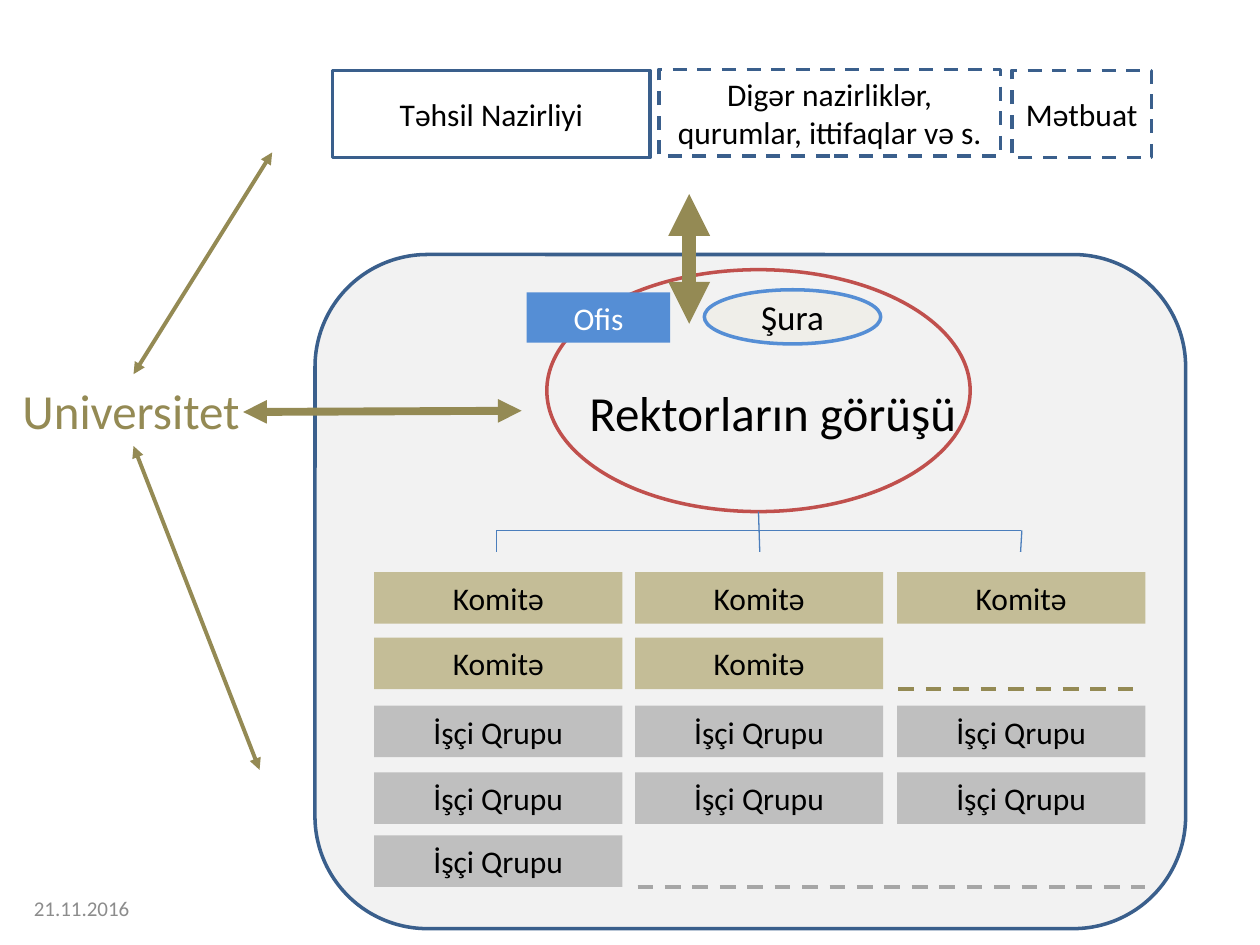
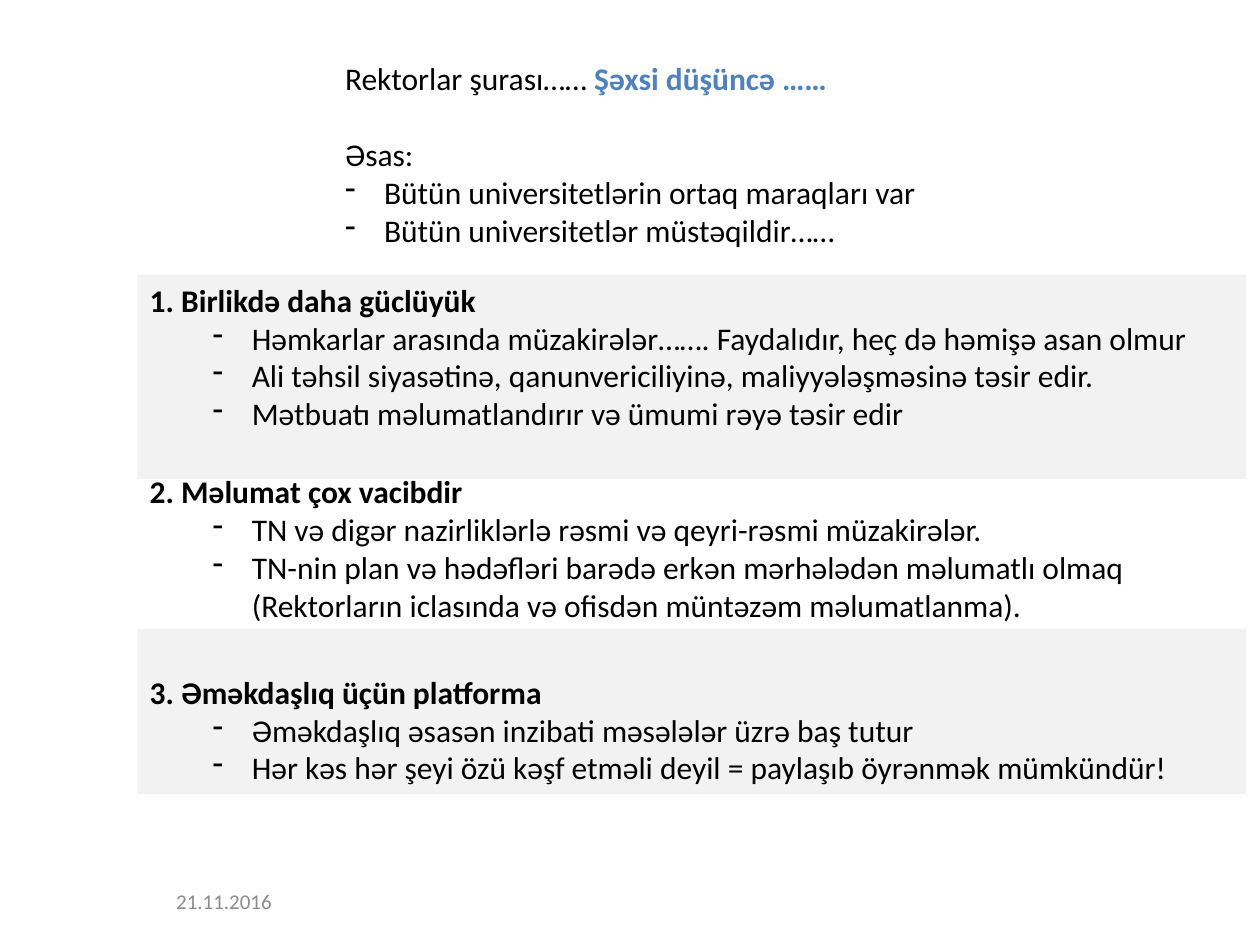
from lxml.etree import SubElement
from pptx import Presentation
from pptx.dml.color import RGBColor
from pptx.enum.dml import MSO_LINE_DASH_STYLE as Dash
from pptx.enum.shapes import MSO_CONNECTOR as Connector, MSO_SHAPE as Shape
from pptx.enum.text import MSO_ANCHOR as Anchor, PP_ALIGN as Align
from pptx.oxml.ns import qn
from pptx.util import Emu, Pt

PX = 9144  # 100 px to the inch
FONT = "Calibri"
BLACK, WHITE = "000000", "FFFFFF"
PANEL, NAVY, RED = "F2F2F2", "3A5F8C", "C0504D"
BLUE, ACCENT, TREE = "558ED5", "4F81BD", "4B7EBC"
OLIVE, SAND, CREAM = "948A54", "C4BD97", "EEECE1"
SILVER, GREY, DATE_GREY = "BFBFBF", "A6A6A6", "8C8C8C"


def px(*lengths):
    return [Emu(length * PX) for length in lengths]


def rgb(color):
    return RGBColor.from_string(color)


def style_paragraph(paragraph, size, color, bold=False):
    font = paragraph.font
    font.name, font.size, font.bold = FONT, Pt(size), bold
    font.color.rgb = rgb(color)


def add_box(slide, kind, at, fill=None, line=None, dashed=False,
            text="", size=18, color=BLACK):
    box = slide.shapes.add_shape(kind, *px(*at))
    box.shadow.inherit = False
    if fill:
        box.fill.solid()
        box.fill.fore_color.rgb = rgb(fill)
    else:
        box.fill.background()
    if line:
        box.line.color.rgb = rgb(line)
        box.line.width = Pt(2)
        if dashed:
            box.line.dash_style = Dash.DASH
    else:
        box.line.fill.background()
    if text:
        box.text_frame.vertical_anchor = Anchor.MIDDLE
        paragraph = box.text_frame.paragraphs[0]
        paragraph.text = text
        paragraph.alignment = Align.CENTER
        style_paragraph(paragraph, size, color)
    return box


def add_label(slide, at, text, size, color, wrap=False, anchor=Anchor.TOP):
    frame = slide.shapes.add_textbox(*px(*at)).text_frame
    frame.word_wrap = wrap
    frame.vertical_anchor = anchor
    frame.text = text
    style_paragraph(frame.paragraphs[0], size, color)


def add_date(slide, left, top):
    add_label(slide, (left, top, 233, 40), "21.11.2016", 12, DATE_GREY,
              wrap=True, anchor=Anchor.MIDDLE)


def add_line(slide, start, end, color, width, dashed=False, arrows=False):
    line = slide.shapes.add_connector(Connector.STRAIGHT, *px(*start, *end))
    line.line.color.rgb = rgb(color)
    line.line.width = Pt(width)
    if dashed:
        line.line.dash_style = Dash.DASH
    if arrows:
        outline = line.line._get_or_add_ln()
        for tip in ("a:headEnd", "a:tailEnd"):
            SubElement(outline, qn(tip), type="triangle")
    SubElement(line._element.spPr, qn("a:effectLst"))


def set_dash_bullet(paragraph, margin):
    properties = paragraph._p.get_or_add_pPr()
    properties.set("marL", str(margin * PX))
    properties.set("indent", str(-31 * PX))
    SubElement(properties, qn("a:buFontTx"))
    SubElement(properties, qn("a:buChar"), char="-")


def fill_outline(frame, heading, points, margin, bold):
    """Write a heading and its dashed points into the frame."""
    frame.word_wrap = True
    frame.vertical_anchor = Anchor.TOP
    lead = frame.paragraphs[-1]
    lead.text = heading
    lead.alignment = Align.LEFT
    style_paragraph(lead, 18, BLACK, bold)
    for point in points:
        paragraph = frame.add_paragraph()
        paragraph.text = point
        paragraph.alignment = Align.LEFT
        set_dash_bullet(paragraph, margin)
        style_paragraph(paragraph, 18, BLACK)
    return lead


def build_structure(slide):
    # Rectors' conference
    add_box(slide, Shape.ROUNDED_RECTANGLE, (250, 202, 691, 535), PANEL, NAVY)
    add_date(slide, 17, 701)
    add_box(slide, Shape.OVAL, (434, 214, 336, 192), line=RED)
    council = add_box(slide, Shape.OVAL, (559, 230, 140, 43), CREAM, BLUE,
                      text="Şura", size=20)
    council_fill = council._element.spPr.find(qn("a:solidFill"))
    SubElement(council_fill[0], qn("a:alpha"), val="50000")
    add_label(slide, (458, 299, 314, 57), "Rektorların görüşü", 28, BLACK)

    # Outside bodies
    for left, top, width, dashed, name in (
            (264, 56, 252, False, "Təhsil Nazirliyi"),
            (523, 55, 271, True, "Digər nazirliklər, qurumlar, ittifaqlar və s."),
            (803, 56, 111, True, "Mətbuat")):
        body = add_box(slide, Shape.RECTANGLE, (left, top, width, 69), WHITE,
                       NAVY, dashed, name)
        body.text_frame.word_wrap = True

    # Committees and working groups
    columns = (297, 504, 712)
    for top, name, fill, count in (
            (454, "Komitə", SAND, 3), (506, "Komitə", SAND, 2),
            (560, "İşçi Qrupu", SILVER, 3), (613, "İşçi Qrupu", SILVER, 3),
            (663, "İşçi Qrupu", SILVER, 1)):
        for left in columns[:count]:
            add_box(slide, Shape.RECTANGLE, (left, top, 197, 41), fill, text=name)
    add_line(slide, (713, 547), (908, 547), OLIVE, 2.25, dashed=True)
    add_line(slide, (506, 704), (909, 704), GREY, 2.25, dashed=True)

    # Branches from the conference to the committees
    for start, end in (((394, 438), (394, 421)), ((394, 421), (810, 421)),
                       ((810, 438), (811, 421)), ((602, 406), (603, 438))):
        add_line(slide, start, end, TREE, 0.75)

    # University, office and their links
    add_label(slide, (8, 297, 194, 57), "Universitet", 28, OLIVE)
    add_box(slide, Shape.RECTANGLE, (418, 232, 114, 40), BLUE,
            text="Ofis", color=WHITE)
    for start, end, width in (((106, 297), (216, 121), 2.25),
                              ((193, 327), (414, 326), 4.5),
                              ((206, 611), (106, 354), 2.25),
                              ((547, 257), (547, 154), 8)):
        add_line(slide, start, end, OLIVE, width, arrows=True)


def build_principles(slide):
    add_date(slide, 130, 695)

    # Title and premise
    intro = slide.shapes.add_textbox(*px(264, 42, 736, 222)).text_frame
    title = intro.paragraphs[0]
    title.add_run().text = "Rektorlar şurası…… "
    opinion = title.add_run()
    opinion.text = "Şəxsi düşüncə ……"
    style_paragraph(title, 18, BLACK)
    opinion.font.bold = True
    opinion.font.color.rgb = rgb(ACCENT)
    intro.add_paragraph()
    premise = fill_outline(intro, "Əsas:", (
        "Bütün universitetlərin ortaq maraqları var",
        "Bütün universitetlər müstəqildir……"), 31, bold=False)
    premise.space_before = Pt(22)

    # Numbered sections: top, height, top inset, fill, heading, points
    sections = (
        (218, 162, 5, PANEL, "1. Birlikdə daha güclüyük", (
            "Həmkarlar arasında müzakirələr……. Faydalıdır, heç də həmişə asan olmur",
            "Ali təhsil siyasətinə, qanunvericiliyinə, maliyyələşməsinə təsir edir.",
            "Mətbuatı məlumatlandırır və ümumi rəyə təsir edir")),
        (370, 131, 5, None, "2. Məlumat çox vacibdir", (
            "TN və digər nazirliklərlə rəsmi və qeyri-rəsmi müzakirələr.",
            "TN-nin plan və hədəfləri barədə erkən mərhələdən məlumatlı olmaq "
            "(Rektorların iclasında və ofisdən müntəzəm məlumatlanma).")),
        (499, 131, 35, PANEL, "3. Əməkdaşlıq üçün platforma", (
            "Əməkdaşlıq əsasən inzibati məsələlər üzrə baş tutur",
            "Hər kəs hər şeyi özü kəşf etməli deyil = paylaşıb öyrənmək mümkündür!")))
    for top, height, inset, fill, heading, points in sections:
        section = add_box(slide, Shape.RECTANGLE, (109, top, 880, height), fill)
        section.text_frame.margin_top = Emu(inset * PX)
        fill_outline(section.text_frame, heading, points, 81, bold=True)


def main():
    deck = Presentation()
    deck.slide_width, deck.slide_height = px(1000, 750)
    blank = deck.slide_layouts[6]
    for build in (build_structure, build_principles):
        build(deck.slides.add_slide(blank))
    deck.save("out.pptx")


if __name__ == "__main__":
    main()
